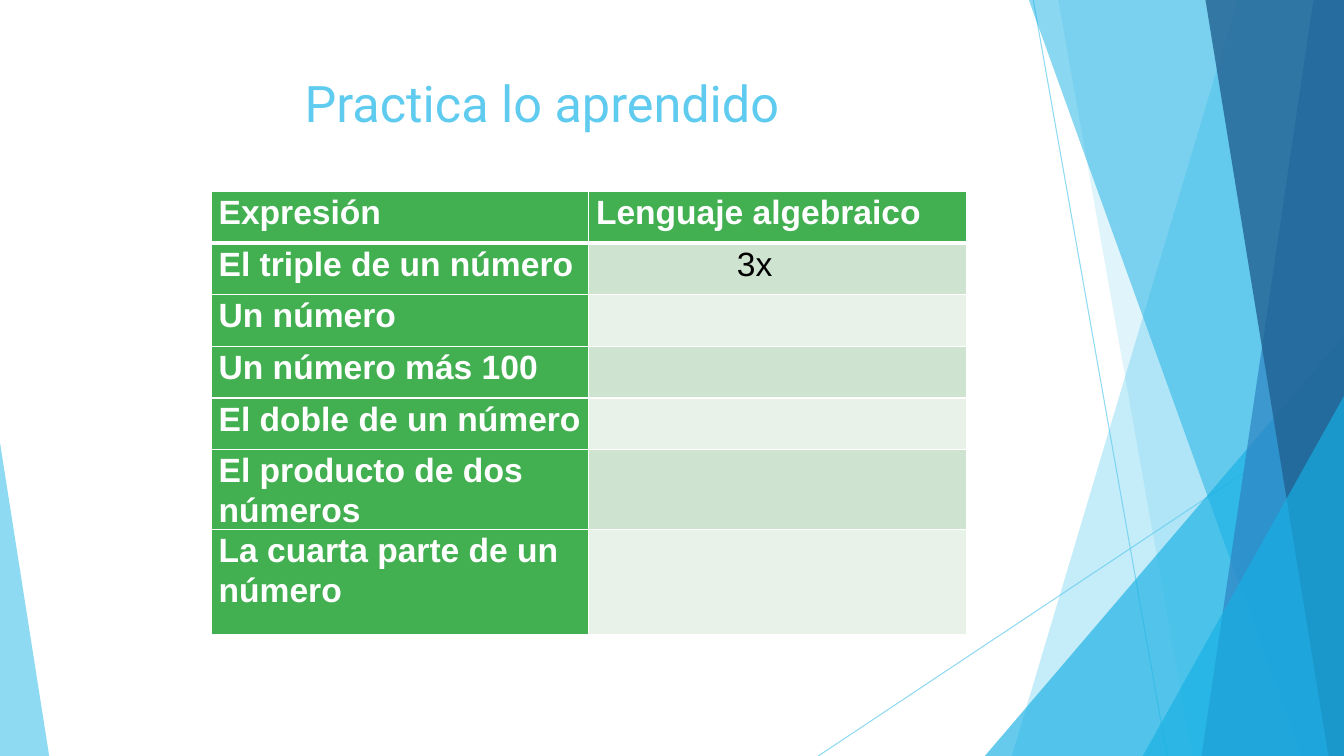
"""Build the algebra practice slide with its faceted blue frame."""
from lxml.etree import SubElement
from pptx import Presentation
from pptx.dml.color import RGBColor
from pptx.enum.shapes import MSO_CONNECTOR, MSO_SHAPE
from pptx.enum.text import MSO_ANCHOR, MSO_AUTO_SIZE, PP_ALIGN
from pptx.oxml.ns import qn
from pptx.util import Cm, Pt

WIDTH, HEIGHT = 33.87, 19.05
SKY, CYAN, BLUE, NAVY = "5FCBEF", "17B0E4", "2E83C3", "226292"
GREEN, MINT, PALE, WHITE, BLACK = "42B051", "CFE4D0", "E9F2E9", "FFFFFF", "000000"


def paint(fill, color, opacity=100):
    """Give a fill a solid colour and an opacity in percent."""
    fill.solid()
    fill.fore_color.rgb = RGBColor.from_string(color)
    if opacity < 100:
        tint = next(fill._xPr.iter(qn("a:srgbClr")))
        SubElement(tint, qn("a:alpha"), val=str(opacity * 1000))


def style_text(para, font_name, size, color, bold=False):
    """Format every run of a paragraph."""
    for span in para.runs:
        span.font.name = font_name
        span.font.size = Pt(size)
        span.font.bold = bold
        span.font.color.rgb = RGBColor.from_string(color)


deck = Presentation()
deck.slide_width, deck.slide_height = Cm(WIDTH), Cm(HEIGHT)
page = deck.slides.add_slide(deck.slide_layouts[5])

for ends in [(26.04, 0, 29.41, HEIGHT), (WIDTH, 10.24, 20.62, HEIGHT)]:
    ray = page.shapes.add_connector(MSO_CONNECTOR.STRAIGHT, *[Cm(value) for value in ends])
    ray.line.width = Pt(0.75)
    paint(ray.line.fill, SKY, 70)
    SubElement(ray._element.spPr, qn("a:effectLst"))

# Bands hold top-left and bottom-left x; triangles hold left, top, width and apex.
facets = [
    ("band", (31.19, 25.5), SKY, 36),
    ("band", (26.67, 30.05), SKY, 20),
    ("triangle", (24.82, 8.46, 9.05, 1), CYAN, 66),
    ("band", (25.93, 32.79), CYAN, 50),
    ("band", (33.1, 30.28), BLUE, 70),
    ("band", (30.38, 33.48), NAVY, 80),
    ("triangle", (28.8, 9.98, 5.07, 1), CYAN, 66),
    ("triangle", (0, 11.15, 1.24, 0), SKY, 70),
]
for kind, geometry, color, opacity in facets:
    if kind == "band":
        top_x, bottom_x = geometry
        corners = [(WIDTH, 0), (WIDTH, HEIGHT), (bottom_x, HEIGHT)]
        outline = page.shapes.build_freeform(Cm(top_x), 0)
        outline.add_line_segments([(Cm(x), Cm(y)) for x, y in corners], close=True)
        facet = outline.convert_to_shape()
    else:
        left, top, width, apex = geometry
        facet = page.shapes.add_shape(
            MSO_SHAPE.ISOSCELES_TRIANGLE, Cm(left), Cm(top), Cm(width), Cm(HEIGHT - top))
        facet.adjustments[0] = apex
    paint(facet.fill, color, opacity)
    facet.line.fill.background()
    facet.shadow.inherit = False

title = page.shapes.title
title.left, title.top, title.width, title.height = Cm(1.88), Cm(1.7), Cm(23.88), Cm(3.66)
title.text_frame.text = "Practica lo aprendido "
title.text_frame.auto_size = MSO_AUTO_SIZE.NONE
title.text_frame.vertical_anchor = MSO_ANCHOR.TOP
title.text_frame.paragraphs[0].alignment = PP_ALIGN.CENTER
style_text(title.text_frame.paragraphs[0], "Roboto", 36, SKY)

exercises = [
    ("Expresión", "Lenguaje algebraico"),
    ("El triple de un número", "3x"),
    ("Un número", ""),
    ("Un número más 100", ""),
    ("El doble de un número", ""),
    ("El producto de dos números", ""),
    ("La cuarta parte de un número", ""),
]
row_heights = [1.3] * 6 + [2.64]
frame = page.shapes.add_table(
    len(exercises), 2, Cm(5.33), Cm(4.83), Cm(19.02), Cm(sum(row_heights)))
table = frame.table
table.first_row = table.horz_banding = False
for column in table.columns:
    column.width = Cm(9.51)

for row_index, texts in enumerate(exercises):
    table.rows[row_index].height = Cm(row_heights[row_index])
    for column_index, text in enumerate(texts):
        cell = table.cell(row_index, column_index)
        is_heading = row_index == 0 or column_index == 0
        borders = {"lnL": 1, "lnR": 1, "lnT": 3 if row_index == 1 else 1,
                   "lnB": 3 if row_index == 0 else 1}
        for side, points in borders.items():
            border = SubElement(cell._tc.get_or_add_tcPr(), qn(f"a:{side}"), w=str(Pt(points)))
            SubElement(SubElement(border, qn("a:solidFill")), qn("a:srgbClr"), val=WHITE)
        paint(cell.fill, GREEN if is_heading else MINT if row_index % 2 else PALE)
        cell.margin_left = Cm(0.18 if is_heading else 3.73)
        cell.margin_right = Cm(0.18)
        cell.margin_top = cell.margin_bottom = 0
        para = cell.text_frame.paragraphs[0]
        para.text = text
        para.line_spacing = 1.07
        style_text(para, "Arial", 24, WHITE if is_heading else BLACK, is_heading)

deck.save("out.pptx")
